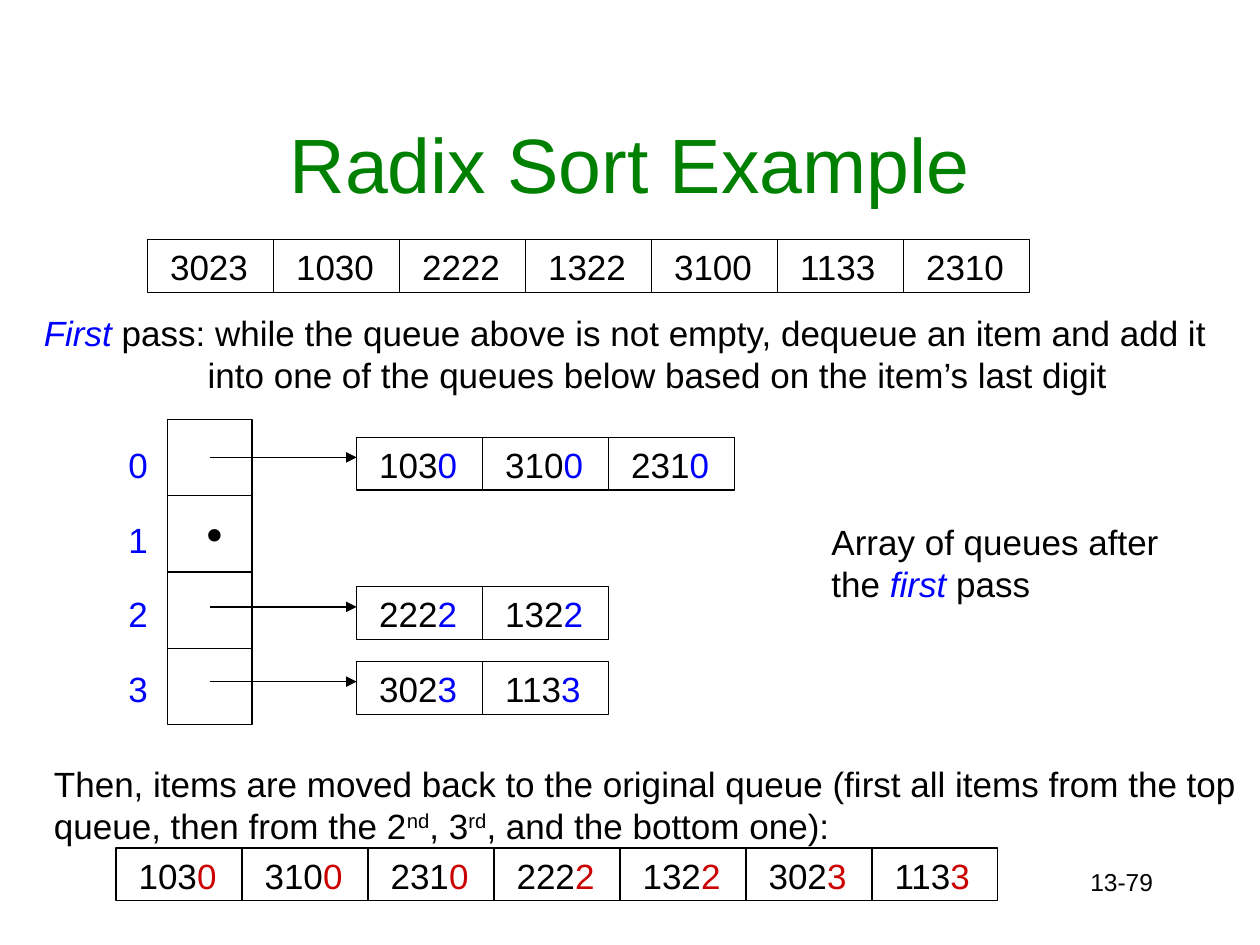
from dataclasses import dataclass

from lxml.etree import SubElement
from pptx import Presentation
from pptx.dml.color import RGBColor
from pptx.enum.shapes import MSO_CONNECTOR, MSO_SHAPE
from pptx.enum.text import MSO_ANCHOR, PP_ALIGN
from pptx.oxml.ns import qn
from pptx.util import Inches, Pt


@dataclass(frozen=True)
class Theme:
    ink: RGBColor = RGBColor(0, 0, 0)
    heading: RGBColor = RGBColor(0, 0x80, 0)
    digit: RGBColor = RGBColor(0, 0, 0xFF)
    moved: RGBColor = RGBColor(0xCC, 0, 0)
    sans: str = "Arial"
    serif: str = "Times New Roman"
    title_size: int = 44
    body_size: int = 20
    number_size: int = 14
    dot_size: int = 60
    leading: float = 1.2
    line_width: float = 0.75


THEME = Theme()
CELL_W, CELL_H = 1, 0.42
ROW_STEP = 1.78 / 3


def apply(target, values):
    for name, value in values.items():
        setattr(target, name, value)


def write(frame, runs, size=THEME.body_size, font=THEME.sans, **paragraph_format):
    apply(frame, {"word_wrap": True, "vertical_anchor": MSO_ANCHOR.TOP})
    paragraph = frame.paragraphs[0]
    apply(paragraph, {"alignment": PP_ALIGN.LEFT, "space_before": Pt(0),
                      "line_spacing": Pt(size * THEME.leading), **paragraph_format})
    for words, color, *style in runs:
        run = paragraph.add_run()
        run.text = words
        apply(run.font, {"name": font, "size": Pt(size), "italic": "italic" in style})
        run.font.color.rgb = color
        if "super" in style:
            run._r.get_or_add_rPr().set("baseline", "30000")
    return paragraph


def add_text(slide, box, runs, **options):
    caption = slide.shapes.add_textbox(*map(Inches, box))
    return write(caption.text_frame, runs, **options)


def add_cell(slide, box):
    cell = slide.shapes.add_shape(MSO_SHAPE.RECTANGLE, *map(Inches, box))
    cell.shadow.inherit = False
    cell.fill.background()
    cell.line.color.rgb = THEME.ink
    cell.line.width = Pt(THEME.line_width)
    return cell


def add_queue(slide, left, top, items, last_digit_color):
    for column, item in enumerate(items):
        cell = add_cell(slide, (left + column * CELL_W, top, CELL_W, CELL_H))
        apply(cell.text_frame, {"margin_left": Inches(0.18), "margin_right": 0})
        write(cell.text_frame, [(item[:-1], THEME.ink), (item[-1], last_digit_color)])


def add_arrow(slide, left, right, y):
    arrow = slide.shapes.add_connector(
        MSO_CONNECTOR.STRAIGHT, Inches(left), Inches(y), Inches(right), Inches(y))
    arrow.line.color.rgb = THEME.ink
    arrow.line.width = Pt(THEME.line_width)
    SubElement(arrow.line._get_or_add_ln(), qn("a:tailEnd"), type="triangle")
    SubElement(arrow._element.spPr, qn("a:effectLst"))


def add_title(slide, box):
    title = slide.shapes.title
    apply(title, dict(zip(("left", "top", "width", "height"), map(Inches, box))))
    write(title.text_frame, [("Radix Sort Example", THEME.heading)],
          size=THEME.title_size, alignment=PP_ALIGN.CENTER, line_spacing=1.0)
    title.text_frame.vertical_anchor = MSO_ANCHOR.MIDDLE


def add_first_pass(slide, box):
    rule = add_text(slide, box, [
        ("First", THEME.digit, "italic"),
        (" pass: while the queue above is not empty, dequeue an item and add it "
         "into one of the queues below based on the item’s last digit", THEME.ink)])
    hanging = Inches(1.3)
    properties = rule._p.get_or_add_pPr()
    properties.set("marL", str(hanging))
    properties.set("indent", str(-hanging))


def add_queue_array(slide, box, queues):
    left, top, width, height = box
    slot_h = height / len(queues)
    for digit, items in enumerate(queues):
        row_top = top + 0.14 + digit * ROW_STEP
        add_cell(slide, (left, top + digit * slot_h, width, slot_h))
        add_text(slide, (left - 0.41, row_top, 0.42, 0.43), [(str(digit), THEME.digit)])
        if items:
            add_queue(slide, left + 1.5, row_top, items, THEME.digit)
            add_arrow(slide, left + width / 2, left + 1.5, row_top + 0.16)
        else:
            add_text(slide, (left + 0.17, top + digit * slot_h - 0.53, 0.42, 1.1),
                     [(".", THEME.ink)], size=THEME.dot_size, font=THEME.serif)


def add_move_back(slide, box):
    add_text(slide, box, [
        ("Then, items are moved back to the original queue (first all items "
         "from the top queue, then from the 2", THEME.ink),
        ("nd", THEME.ink, "super"), (", 3", THEME.ink),
        ("rd", THEME.ink, "super"), (", and the bottom one):", THEME.ink)])


def main():
    deck = Presentation()
    apply(deck, {"slide_width": Inches(10), "slide_height": Inches(7.5)})
    slide = deck.slides.add_slide(deck.slide_layouts[5])

    unsorted = ["3023", "1030", "2222", "1322", "3100", "1133", "2310"]
    queues = [[item for item in unsorted if item[-1] == digit] for digit in "0123"]
    regrouped = sum(queues, [])

    add_title(slide, (0.75, 0.67, 8.5, 1.25))
    add_queue(slide, 1.17, 1.9, unsorted, THEME.ink)
    add_first_pass(slide, (0.25, 2.42, 9.5, 0.77))
    add_queue_array(slide, (1.33, 3.33, 0.67, 2.42), queues)
    add_text(slide, (6.5, 4.08, 3.08, 0.77), [
        ("Array of queues after the ", THEME.ink),
        ("first ", THEME.digit, "italic"), ("pass", THEME.ink)])
    add_move_back(slide, (0.33, 6, 9.67, 0.77))
    add_queue(slide, 0.92, 6.73, regrouped, THEME.moved)
    add_text(slide, (7.17, 6.83, 2.08, 0.5), [("13-79", THEME.ink)],
             size=THEME.number_size, alignment=PP_ALIGN.RIGHT)
    deck.save("out.pptx")


if __name__ == "__main__":
    main()
